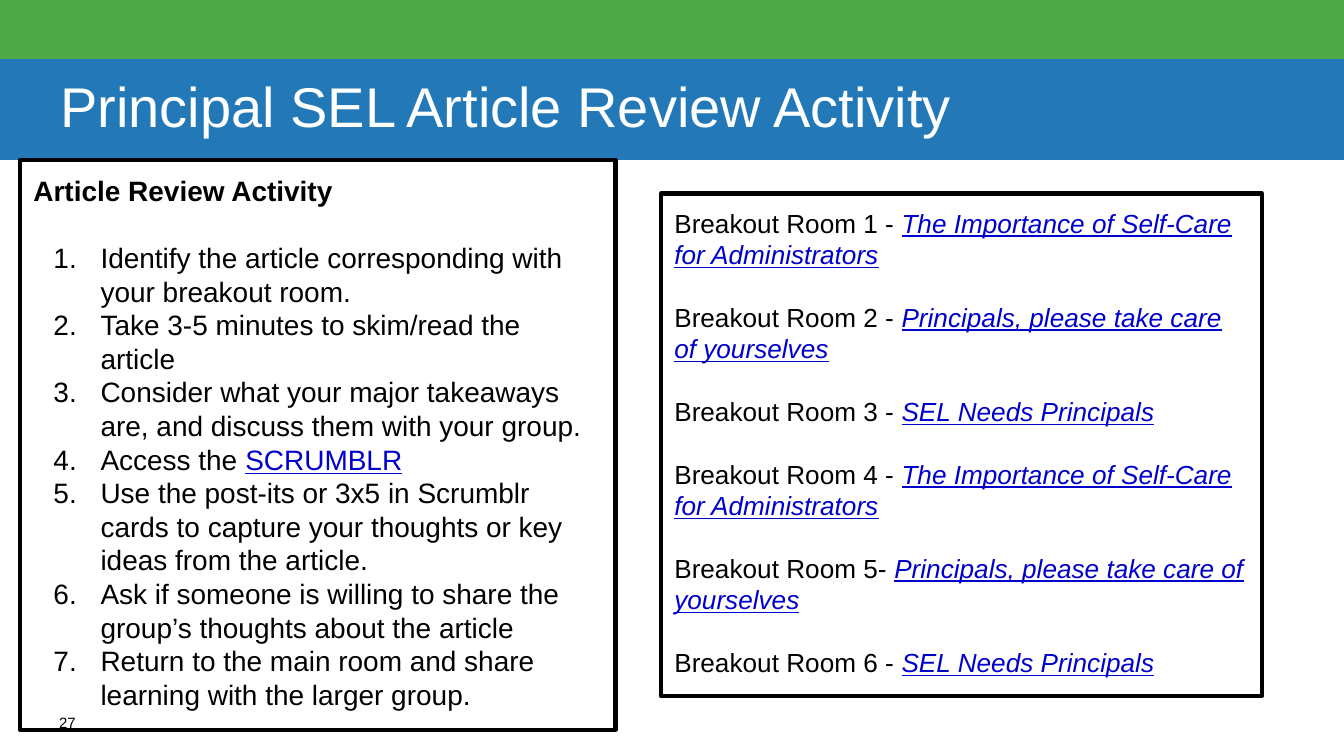
from dataclasses import dataclass

from lxml import etree
from pptx import Presentation
from pptx import util as u
from pptx.dml.color import RGBColor
from pptx.enum import shapes, text
from pptx.oxml import ns

Pt = u.Pt


@dataclass(frozen=True)
class Theme:
    font: str = "Arial"
    green: RGBColor = RGBColor(0x4E, 0xA8, 0x48)
    blue: RGBColor = RGBColor(0x23, 0x79, 0xB8)
    white: RGBColor = RGBColor(255, 255, 255)
    ink: RGBColor = RGBColor(0, 0, 0)
    link: RGBColor = RGBColor(0, 0, 0xCC)
    title_size: float = 30
    steps_size: float = 15
    rooms_size: float = 14
    number_size: float = 8
    leading: float = 1.2
    border: float = 2.25


THEME = Theme()

STEPS = [
    ("Identify the article corresponding with your breakout room.", ""),
    ("Take 3-5 minutes to skim/read the article", ""),
    ("Consider what your major takeaways are, and discuss them with your group.", ""),
    ("Access the ", "SCRUMBLR"),
    ("Use the post-its or 3x5 in Scrumblr cards to capture your thoughts or key "
     "ideas from the article.", ""),
    ("Ask if someone is willing to share the group’s thoughts about the article", ""),
    ("Return to the main room and share learning with the larger group.", ""),
]
ARTICLES = [
    "The Importance of Self-Care for Administrators",
    "Principals, please take care of yourselves",
    "SEL Needs Principals",
]
ROOMS = ["Breakout Room 1 - ", "Breakout Room 2 - ", "Breakout Room 3 - ",
         "Breakout Room 4 - ", "Breakout Room 5- ", "Breakout Room 6 - "]


def set_frame(frame, inset_x, inset_y, anchor):
    frame.word_wrap = True
    frame.margin_left = frame.margin_right = Pt(inset_x)
    frame.margin_top = frame.margin_bottom = Pt(inset_y)
    frame.vertical_anchor = anchor


def style(font, size, color):
    font.name = THEME.font
    font.size = Pt(size)
    font.color.rgb = color


def add_band(slide, top, height, color):
    band = slide.shapes.add_shape(
        shapes.MSO_SHAPE.RECTANGLE, 0, Pt(top), Pt(720), Pt(height))
    band.shadow.inherit = False
    band.fill.solid()
    band.fill.fore_color.rgb = color
    band.line.fill.background()
    return band


def add_title(slide, wording):
    band = add_band(slide, 31.7, 54, THEME.blue)
    set_frame(band.text_frame, 32.4, 0, text.MSO_ANCHOR.MIDDLE)
    title = band.text_frame.paragraphs[0]
    title.text = wording
    title.alignment = text.PP_ALIGN.LEFT
    title.line_spacing = 0.9
    style(title.font, THEME.title_size, THEME.white)


def add_page_number(slide, number):
    frame = slide.shapes.add_textbox(
        Pt(31.7), Pt(382.3), Pt(26.6), Pt(14.4)).text_frame
    set_frame(frame, 0, 0, text.MSO_ANCHOR.TOP)
    frame.paragraphs[0].text = number
    style(frame.paragraphs[0].font, THEME.number_size, THEME.ink)


def add_panel(slide, left, top, width, height):
    panel = slide.shapes.add_shape(
        shapes.MSO_SHAPE.RECTANGLE, Pt(left), Pt(top), Pt(width), Pt(height))
    panel.shadow.inherit = False
    panel.fill.background()
    panel.line.color.rgb = THEME.ink
    panel.line.width = Pt(THEME.border)
    outline = panel.line.fill._xPr
    etree.SubElement(outline, ns.qn("a:round"))
    set_frame(panel.text_frame, 7.2, 7.2, text.MSO_ANCHOR.TOP)
    return panel.text_frame


def number_paragraph(paragraph):
    properties = paragraph._p.get_or_add_pPr()
    properties.set("marL", str(Pt(36)))
    properties.set("indent", str(-Pt(25.2)))
    etree.SubElement(properties, ns.qn("a:buFont"), typeface=THEME.font)
    etree.SubElement(properties, ns.qn("a:buAutoNum"), type="arabicPeriod")


def write_line(paragraph, size, wording, link="", italic_link=False):
    paragraph.alignment = text.PP_ALIGN.LEFT
    paragraph.line_spacing = Pt(size * THEME.leading)
    lead = paragraph.add_run()
    lead.text = wording
    style(lead.font, size, THEME.ink)
    if link:
        linked = paragraph.add_run()
        linked.text = link
        style(linked.font, size, THEME.link)
        linked.font.underline = True
        linked.font.italic = italic_link


def add_steps(slide):
    frame = add_panel(slide, 10.8, 85.7, 319, 305.3)
    size = THEME.steps_size
    heading = frame.paragraphs[0]
    write_line(heading, size, "Article Review Activity")
    heading.space_after = Pt(size * THEME.leading)
    heading.runs[0].font.bold = True
    for wording, link in STEPS:
        step = frame.add_paragraph()
        number_paragraph(step)
        write_line(step, size, wording, link)


def add_rooms(slide):
    frame = add_panel(slide, 354.2, 103.7, 321.8, 269.3)
    size = THEME.rooms_size
    for index, room in enumerate(ROOMS):
        entry = frame.add_paragraph() if index else frame.paragraphs[0]
        write_line(entry, size, room, ARTICLES[index % len(ARTICLES)], True)
        if index:
            entry.space_before = Pt(size * THEME.leading)


def main():
    deck = Presentation()
    deck.slide_width, deck.slide_height = Pt(720), Pt(405)
    slide = deck.slides.add_slide(deck.slide_layouts[6])
    add_band(slide, 0, 31.7, THEME.green)
    add_title(slide, "Principal SEL Article Review Activity")
    add_page_number(slide, "27")
    add_steps(slide)
    add_rooms(slide)
    deck.save("out.pptx")


if __name__ == "__main__":
    main()
